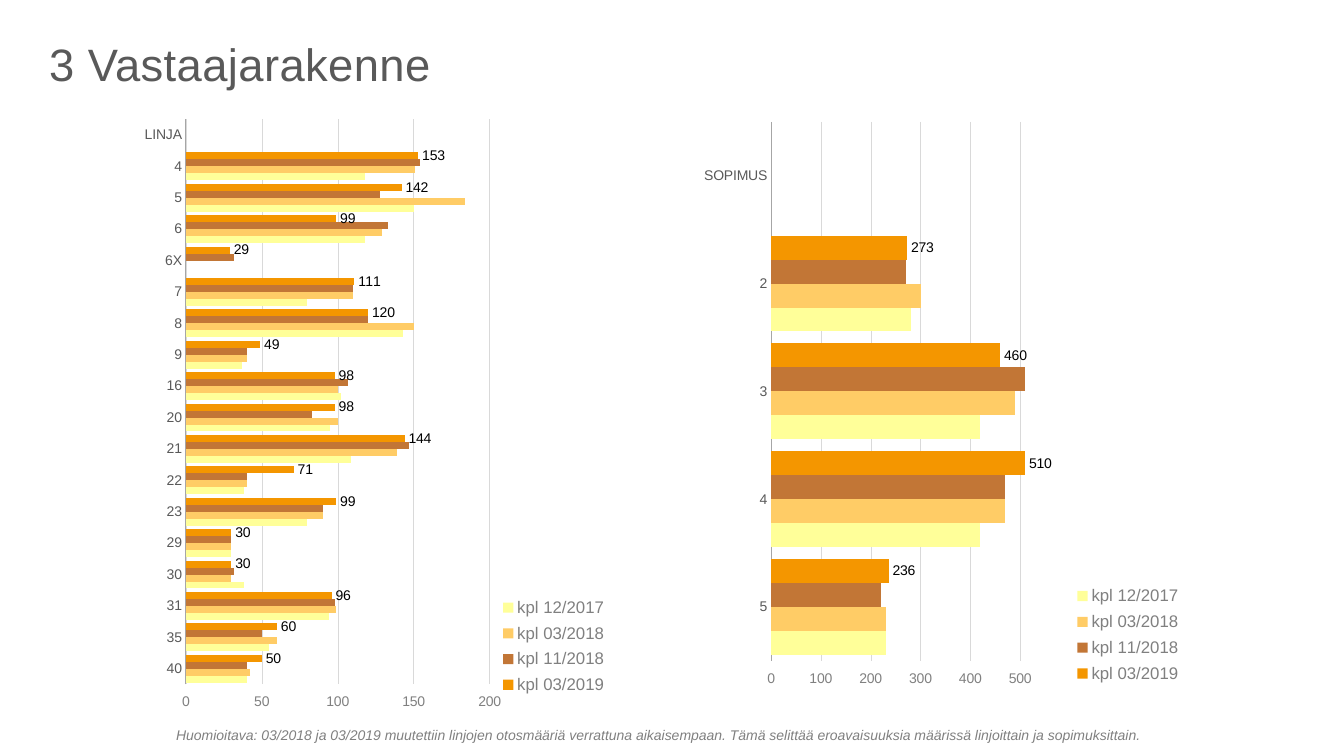
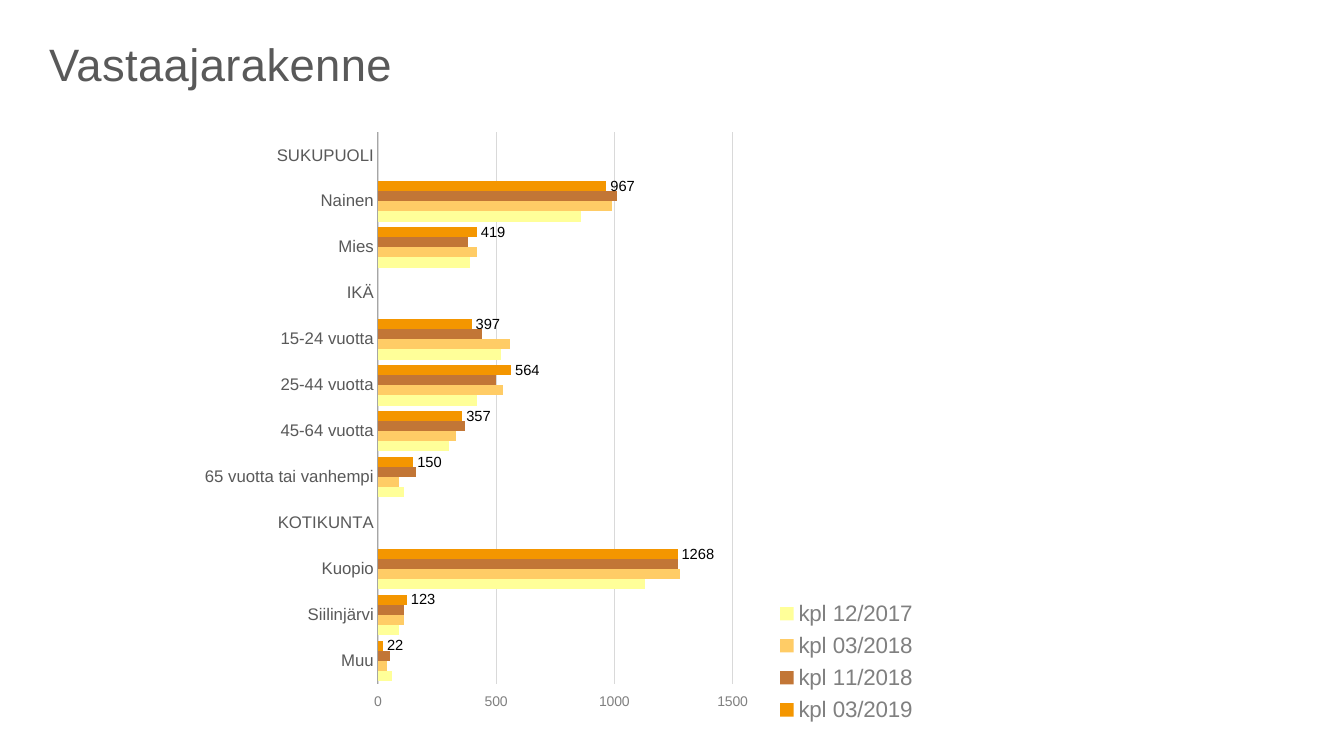
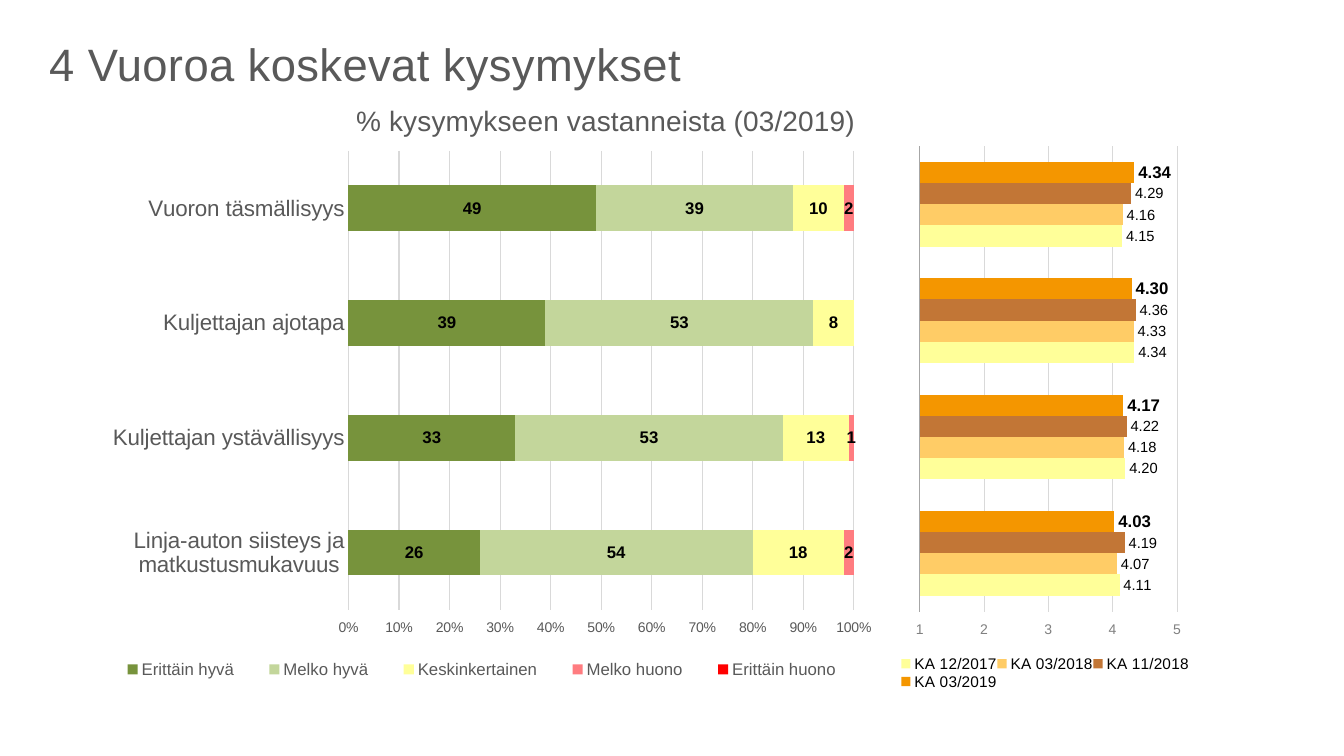
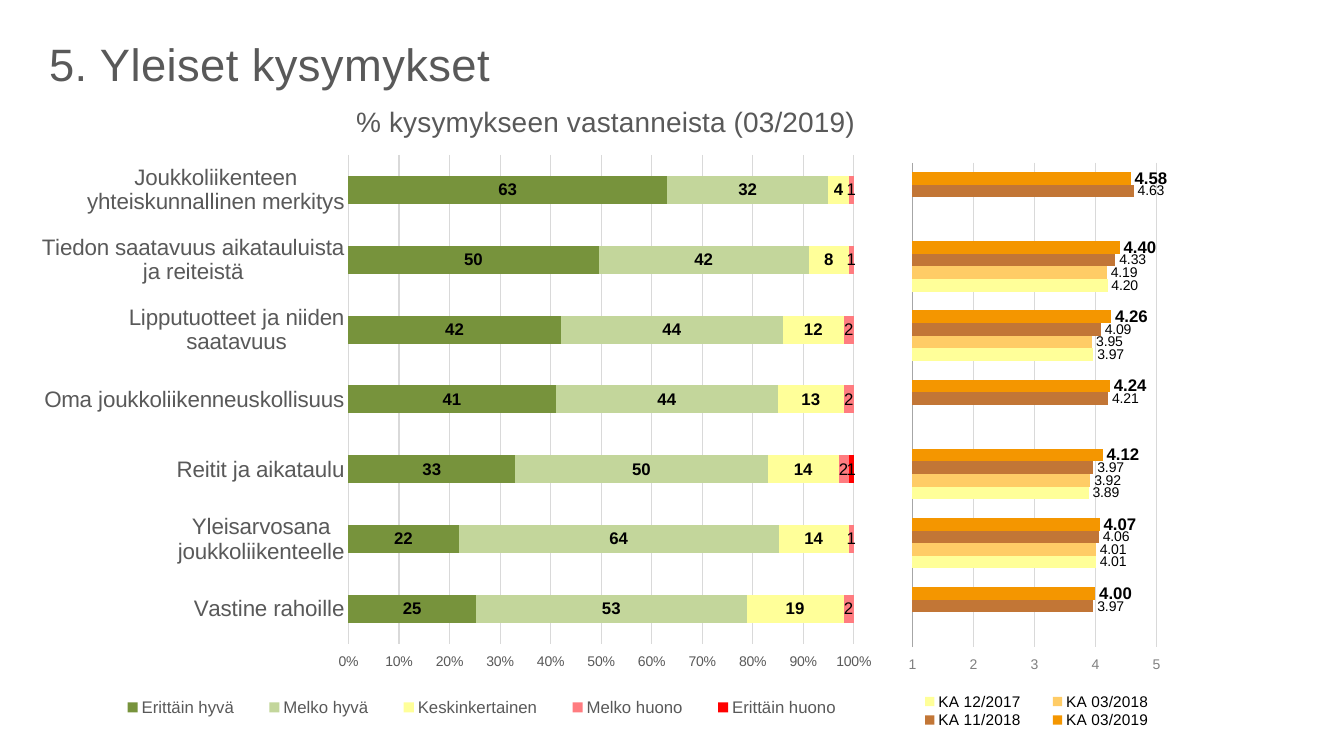
from lxml import etree
from pptx import Presentation
from pptx.chart.data import CategoryChartData
from pptx.dml.color import RGBColor
from pptx.enum.chart import (XL_CHART_TYPE, XL_LABEL_POSITION, XL_LEGEND_POSITION,
                             XL_TICK_LABEL_POSITION, XL_TICK_MARK)
from pptx.oxml.ns import qn
from pptx.util import Cm, Pt

BARS = XL_CHART_TYPE.BAR_CLUSTERED
STACK = XL_CHART_TYPE.BAR_STACKED_100
RIGHT = XL_LEGEND_POSITION.RIGHT
BOTTOM = XL_LEGEND_POSITION.BOTTOM
OUTER = XL_LABEL_POSITION.OUTSIDE_END
CENTER = XL_LABEL_POSITION.CENTER
HIDDEN = XL_TICK_LABEL_POSITION.NONE
HIGH = XL_TICK_LABEL_POSITION.HIGH
NONE = XL_TICK_MARK.NONE

FONT = "Arial"
BLACK = RGBColor(0x00, 0x00, 0x00)
DARK = RGBColor(0x59, 0x59, 0x59)
GRAY = RGBColor(0x80, 0x80, 0x80)
EDGE = RGBColor(0xA6, 0xA6, 0xA6)
PALE = RGBColor(0xD9, 0xD9, 0xD9)
ORANGE = RGBColor(0xF4, 0x96, 0x00)
BROWN = RGBColor(0xC2, 0x76, 0x36)
SAND = RGBColor(0xFF, 0xCC, 0x66)
YELLOW = RGBColor(0xFF, 0xFF, 0x99)
GREEN = RGBColor(0x77, 0x93, 0x3C)
LIME = RGBColor(0xC3, 0xD6, 0x9B)
PINK = RGBColor(0xFF, 0x7C, 0x80)
RED = RGBColor(0xFF, 0x00, 0x00)

DATES = ["03/2019", "11/2018", "03/2018", "12/2017"]
WAVES = [ORANGE, BROWN, SAND, YELLOW]
GRADES = ["Erittäin hyvä", "Melko hyvä", "Keskinkertainen", "Melko huono", "Erittäin huono"]
SCALE = [GREEN, LIME, YELLOW, PINK, RED]


class Deck:
    def __init__(self):
        self.file = Presentation()
        self.file.slide_width = Cm(33.87)
        self.file.slide_height = Cm(19.05)
        self.slide = None

    def start(self, title):
        self.slide = self.file.slides.add_slide(self.file.slide_layouts[6])
        para = self.text(title, (0.99, 0.66, 27.25, 1.37), 32.4, DARK)
        para.line_spacing = 1.1
        para._p.pPr.find(qn("a:defRPr")).set("spc", "30")

    def text(self, words, box, size, color, italic=False):
        frame = self.slide.shapes.add_textbox(*map(Cm, box)).text_frame
        frame.word_wrap = True
        para = frame.paragraphs[0]
        para.text = words
        self.style(para.font, size, color)
        para.font.italic = italic
        return para

    def style(self, font, size, color, bold=False):
        font.name = FONT
        font.size = Pt(size)
        font.bold = bold
        font.color.rgb = color

    def place(self, part, spot, after=None, inner=False):
        for old in part.findall(qn("c:layout")):
            part.remove(old)
        layout = etree.Element(qn("c:layout"))
        manual = etree.SubElement(layout, qn("c:manualLayout"))
        pairs = [("layoutTarget", "inner")] if inner else []
        pairs += [("xMode", "edge"), ("yMode", "edge")]
        pairs += zip("xywh", spot)
        for tag, value in pairs:
            etree.SubElement(manual, qn("c:" + tag)).set("val", str(value))
        if after:
            part.find(qn(after)).addnext(layout)
        else:
            part.insert(0, layout)

    def chart(self, kind, box, cats, names, rows, colors, gap, area):
        data = CategoryChartData()
        data.categories = cats
        for name, row in zip(names, rows):
            data.add_series(name, row)
        chart = self.slide.shapes.add_chart(kind, *map(Cm, box), data).chart
        self.style(chart.font, 18, BLACK)
        chart.has_title = False
        plot = chart.plots[0]
        plot.vary_by_categories = False
        plot.gap_width = gap
        plot.overlap = 100 if kind == STACK else 0
        for series, color in zip(plot.series, colors):
            series.format.fill.solid()
            series.format.fill.fore_color.rgb = color
            series.invert_if_negative = False
        self.place(chart._chartSpace.chart.plotArea, area, inner=True)
        return chart

    def axes(self, chart, size, edge, color, low, high, step, grid):
        cat, val = chart.category_axis, chart.value_axis
        cat.reverse_order = True
        cat.major_tick_mark = NONE
        cat.format.line.color.rgb = edge
        cat.format.line.width = Pt(0.75)
        self.style(cat.tick_labels.font, size, DARK)
        val.minimum_scale, val.maximum_scale, val.major_unit = low, high, step
        val.major_tick_mark = NONE
        val.tick_label_position = HIGH
        val.format.line.fill.background()
        val.major_gridlines.format.line.color.rgb = PALE
        val.major_gridlines.format.line.width = Pt(grid)
        self.style(val.tick_labels.font, 10, color)

    def legend(self, chart, side, size, color, spot):
        chart.has_legend = True
        key = chart.legend
        key.position = side
        key.include_in_layout = False
        self.style(key.font, size, color)
        self.place(key._element, spot, "c:legendPos")

    def label(self, series, size, code, spot, bold=False):
        tags = series.data_labels
        tags.show_value = True
        tags.number_format = code
        tags.number_format_is_linked = False
        tags.position = spot
        self.style(tags.font, size, BLACK, bold)

    def counts(self, box, cats, rows, area, spot, high, step, sizes):
        names = ["kpl " + date for date in DATES]
        chart = self.chart(BARS, box, cats, names, rows, WAVES, 50, area)
        label, axis, key = sizes
        self.axes(chart, axis, EDGE, GRAY, 0, high, step, 0.25)
        self.legend(chart, RIGHT, key, GRAY, spot)
        self.label(chart.plots[0].series[0], label, "General", OUTER)

    def shares(self, tall, cats, rows, bolds):
        chart = self.chart(STACK, (0.98, 2.26, 21.26, tall), cats, GRADES, rows, SCALE,
                           150, (0.367, 0.102, 0.599, 0.764))
        self.axes(chart, 16, PALE, DARK, 0, 1, 0.1, 0.75)
        labels = chart.value_axis.tick_labels
        labels.number_format = "0%"
        labels.number_format_is_linked = False
        self.legend(chart, BOTTOM, 12, DARK, (0.07, 0.94, 0.91, 0.05))
        for place, series in enumerate(chart.plots[0].series):
            self.label(series, 12, "0;;;", CENTER, place < bolds)
        chart.has_title = True
        para = chart.chart_title.text_frame.paragraphs[0]
        para.text = "% kysymykseen vastanneista (03/2019)"
        self.style(para.font, 20, DARK)
        self.place(chart.chart_title._element, (0.37, 0.014), "c:tx")

    def means(self, wide, tall, rows, area, spot, size):
        cats = [str(place + 1) for place in range(len(rows[0]))]
        names = ["KA " + date for date in DATES]
        chart = self.chart(BARS, (22.25, 2.26, wide, tall), cats, names, rows, WAVES, 150, area)
        self.axes(chart, 12, EDGE, GRAY, 1, 5, 1, 0.25)
        chart.category_axis.tick_label_position = HIDDEN
        self.legend(chart, BOTTOM, 11, BLACK, spot)
        for place, series in enumerate(chart.plots[0].series):
            self.label(series, size if place else 12, "0.00", OUTER, place == 0)


def main():
    deck = Deck()

    deck.start("3 Vastaajarakenne")
    deck.counts(
        (3.3, 2.13, 12.7, 15.95),
        ["LINJA", "4", "5", "6", "6X", "7", "8", "9", "16", "20", "21", "22", "23",
         "29", "30", "31", "35", "40"],
        [[None, 153, 142, 99, 29, 111, 120, 49, 98, 98, 144, 71, 99, 30, 30, 96, 60, 50],
         [None, 154, 128, 133, 32, 110, 120, 40, 107, 83, 147, 40, 90, 30, 32, 98, 50, 40],
         [None, 151, 184, 129, None, 110, 150, 40, 100, 100, 139, 40, 90, 30, 30, 99, 60, 42],
         [None, 118, 150, 118, None, 80, 143, 37, 102, 95, 109, 38, 80, 30, 38, 94, 55, 40]],
        (0.109, 0.055, 0.603, 0.893), (0.724, 0.8, 0.23, 0.175), 200, 50, (10, 10, 12))
    deck.counts(
        (16.94, 2.13, 12.98, 16.51),
        ["SOPIMUS", "2", "3", "4", "5"],
        [[None, 273, 460, 510, 236],
         [None, 270, 510, 470, 220],
         [None, 300, 490, 470, 230],
         [None, 280, 420, 420, 230]],
        (0.192, 0.057, 0.532, 0.823), (0.775, 0.755, 0.22, 0.17), 550, 100, (10, 10, 12))
    deck.text("Huomioitava: 03/2018 ja 03/2019 muutettiin linjojen otosmääriä verrattuna "
              "aikaisempaan. Tämä selittää eroavaisuuksia määrissä linjoittain ja sopimuksittain.",
              (4.19, 18.19, 24.99, 0.69), 10, GRAY, italic=True)

    deck.start("Vastaajarakenne")
    deck.counts(
        (2.82, 2.82, 20.5, 15.57),
        ["SUKUPUOLI", "Nainen", "Mies", "IKÄ", "15-24 vuotta", "25-44 vuotta",
         "45-64 vuotta", "65 vuotta tai vanhempi", "KOTIKUNTA", "Kuopio", "Siilinjärvi", "Muu"],
        [[None, 967, 419, None, 397, 564, 357, 150, None, 1268, 123, 22],
         [None, 1010, 380, None, 440, 500, 370, 160, None, 1270, 110, 50],
         [None, 990, 420, None, 560, 530, 330, 90, None, 1280, 110, 40],
         [None, 860, 390, None, 520, 420, 300, 110, None, 1130, 90, 60]],
        (0.327, 0.033, 0.436, 0.893), (0.813, 0.78, 0.18, 0.22), 1500, 500, (10.5, 12, 16))

    deck.start("4 Vuoroa koskevat kysymykset")
    deck.shares(
        15.14,
        ["Vuoron täsmällisyys", "Kuljettajan ajotapa", "Kuljettajan ystävällisyys",
         "Linja-auton siisteys ja matkustusmukavuus"],
        [[49, 39, 33, 26], [39, 53, 53, 54], [10, 8, 13, 18], [2, 0, 1, 2], [0, 0, 0, 0]], 4)
    deck.means(
        8.99, 15.14,
        [[4.34, 4.3, 4.17, 4.03],
         [4.29, 4.36, 4.22, 4.19],
         [4.16, 4.33, 4.18, 4.07],
         [4.15, 4.34, 4.2, 4.11]],
        (0.103, 0.094, 0.721, 0.775), (0.05, 0.941, 0.81, 0.06), 10.5)

    deck.start("5. Yleiset kysymykset")
    deck.shares(
        16.13,
        ["Joukkoliikenteen yhteiskunnallinen merkitys",
         "Tiedon saatavuus aikatauluista ja reiteistä",
         "Lipputuotteet ja niiden saatavuus", "Oma joukkoliikenneuskollisuus",
         "Reitit ja aikataulu", "Yleisarvosana joukkoliikenteelle", "Vastine rahoille"],
        [[63, 50, 42, 41, 33, 22, 25],
         [32, 42, 44, 44, 50, 64, 53],
         [4, 8, 12, 13, 14, 14, 19],
         [1, 1, 2, 2, 2, 1, 2],
         [0, 0, 0, 0, 1, 0, 0]], 3)
    deck.means(
        8.53, 16.13,
        [[4.58, 4.4, 4.26, 4.24, 4.12, 4.07, 4],
         [4.63, 4.33, 4.09, 4.21, 3.97, 4.06, 3.97],
         [None, 4.19, 3.95, None, 3.92, 4.01, None],
         [None, 4.2, 3.97, None, 3.89, 4.01, None]],
        (0.087, 0.114, 0.721, 0.757), (0.045, 0.941, 0.82, 0.06), 10)

    deck.file.save("out.pptx")


if __name__ == "__main__":
    main()
